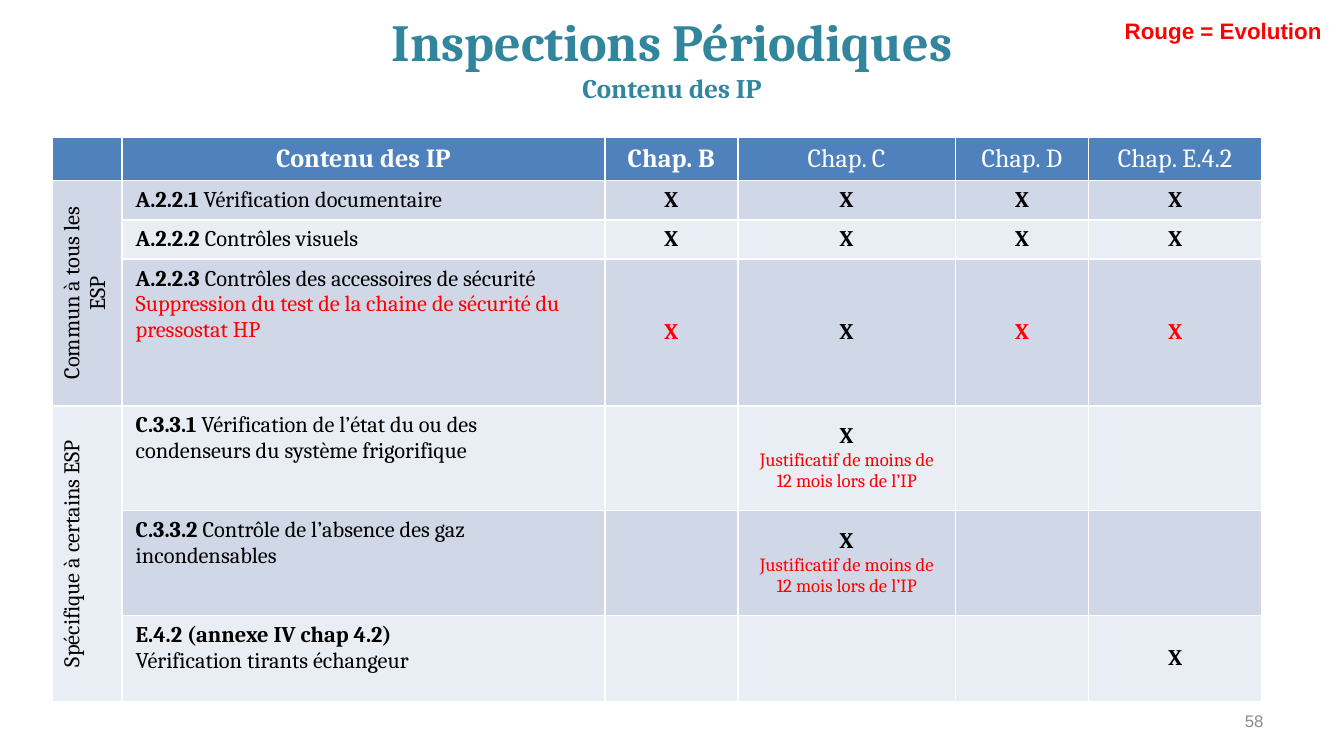
from pptx import Presentation
from pptx.dml.color import RGBColor
from pptx.enum.text import MSO_ANCHOR, PP_ALIGN
from pptx.util import Inches, Pt

LEFT, CENTER, RIGHT = PP_ALIGN.LEFT, PP_ALIGN.CENTER, PP_ALIGN.RIGHT
MIDDLE = MSO_ANCHOR.MIDDLE

WHITE = RGBColor(0xFF, 0xFF, 0xFF)
BLACK = RGBColor(0, 0, 0)
RED = RGBColor(0xFF, 0, 0)
GRAY = RGBColor(0x8C, 0x8C, 0x8C)
TEAL = RGBColor(0x31, 0x85, 0x9C)
HEADER_BLUE = RGBColor(0x4F, 0x81, 0xBD)
BANDS = (RGBColor(0xD0, 0xD8, 0xE8), RGBColor(0xE9, 0xED, 0xF4))

TITLE, SUBTITLE = "Inspections Périodiques", "Contenu des IP"
HEADERS = [("Contenu des IP", True), ("Chap. B", True), ("Chap. C", False),
           ("Chap. D", False), ("Chap. E.4.2", False)]
GROUPS = ["Commun à tous les ESP", "Spécifique à certains ESP"]
GROUP_SIZE = 3
PROOF = "Justificatif de moins de 12 mois lors de l’IP"

MARK = [[("X", True, BLACK, 12)]]
RED_MARK = [[("X", True, RED, 12)]]
PROOF_MARK = MARK + [[(PROOF, False, RED, 10)]]


def described(code, description):
    return [(code + " ", True, BLACK, 12), (description, False, BLACK, 12)]


INSPECTIONS = [
    ([described("A.2.2.1", "Vérification documentaire")], [MARK] * 4),
    ([described("A.2.2.2", "Contrôles visuels")], [MARK] * 4),
    ([described("A.2.2.3", "Contrôles des accessoires de sécurité"),
      [("Suppression du test de la chaine de sécurité du pressostat HP", False, RED, 12)]],
     [RED_MARK, MARK, RED_MARK, RED_MARK]),
    ([described("C.3.3.1", "Vérification de l’état du ou des condenseurs du système frigorifique")],
     [None, PROOF_MARK, None, None]),
    ([described("C.3.3.2", "Contrôle de l’absence des gaz incondensables")],
     [None, PROOF_MARK, None, None]),
    ([[("E.4.2 (annexe IV chap 4.2)", True, BLACK, 12)],
      [("Vérification tirants échangeur", False, BLACK, 12)]],
     [None, None, None, MARK]),
]
COLUMN_WIDTHS = [0.52, 3.59, 0.99, 1.62, 0.99, 1.29]
ROW_HEIGHTS = [0.32, 0.29, 0.29, 1.09, 0.78, 0.78, 0.64]


def style(run, size, color, bold=False, font="Cambria"):
    run.font.name = font
    run.font.size = Pt(size)
    run.font.bold = bold
    run.font.color.rgb = color


def write(frame, paragraphs, align):
    for index, pieces in enumerate(paragraphs):
        paragraph = frame.add_paragraph() if index else frame.paragraphs[0]
        paragraph.alignment = align
        for text, bold, color, size in pieces:
            run = paragraph.add_run()
            run.text = text
            style(run, size, color, bold)


def paint(cell, color):
    cell.fill.solid()
    cell.fill.fore_color.rgb = color


def add_label(slide, text, box, align, size, color, bold):
    label = slide.shapes.add_textbox(*map(Inches, box))
    frame = label.text_frame
    frame.word_wrap = True
    frame.vertical_anchor = MIDDLE
    frame.text = text
    frame.paragraphs[0].alignment = align
    style(frame.paragraphs[0].runs[0], size, color, bold, "Arial")


def add_inspection_table(slide):
    table = slide.shapes.add_table(
        len(ROW_HEIGHTS), len(COLUMN_WIDTHS), Inches(0.39), Inches(1.02),
        Inches(sum(COLUMN_WIDTHS)), Inches(sum(ROW_HEIGHTS))).table
    for column, width in zip(table.columns, COLUMN_WIDTHS):
        column.width = Inches(width)
    for row, height in zip(table.rows, ROW_HEIGHTS):
        row.height = Inches(height)

    corner = table.cell(0, 0)
    paint(corner, HEADER_BLUE)
    corner.text_frame.paragraphs[0].font.size = Pt(12)
    for column, (header, bold) in enumerate(HEADERS, 1):
        cell = table.cell(0, column)
        paint(cell, HEADER_BLUE)
        write(cell.text_frame, [[(header, bold, WHITE, 14)]], CENTER)

    for row, (content, marks) in enumerate(INSPECTIONS, 1):
        band = BANDS[(row - 1) % 2]
        for column, paragraphs in enumerate([content] + marks, 1):
            cell = table.cell(row, column)
            paint(cell, band)
            if column > 1:
                cell.vertical_anchor = MIDDLE
            write(cell.text_frame, paragraphs or [], CENTER if column > 1 else LEFT)

    for index, group in enumerate(GROUPS):
        first = 1 + index * GROUP_SIZE
        cell = table.cell(first, 0)
        cell.merge(table.cell(first + GROUP_SIZE - 1, 0))
        paint(cell, BANDS[index])
        write(cell.text_frame, [[(group, False, BLACK, 12)]], CENTER)
        cell._tc.get_or_add_tcPr().set("vert", "vert270")


def main():
    deck = Presentation()
    deck.slide_width = Inches(10)
    deck.slide_height = deck.slide_width * 9 // 16
    slide = deck.slides.add_slide(deck.slide_layouts[5])

    title = slide.shapes.title
    title.left, title.top, title.width, title.height = map(Inches, (0.5, 0.04, 9, 0.76))
    title.text_frame.text = TITLE + "\v" + SUBTITLE
    title.text_frame.vertical_anchor = MIDDLE
    heading = title.text_frame.paragraphs[0]
    heading.alignment = CENTER
    for run, size in zip(heading.runs, (27.9, 14.4)):
        style(run, size, TEAL, True)

    add_inspection_table(slide)
    add_label(slide, "58", (7.17, 5.21, 2.33, 0.3), RIGHT, 9, GRAY, False)
    add_label(slide, "Rouge = Evolution", (8.27, 0.08, 1.73, 0.3), LEFT, 12, RED, True)
    deck.save("out.pptx")


if __name__ == "__main__":
    main()
